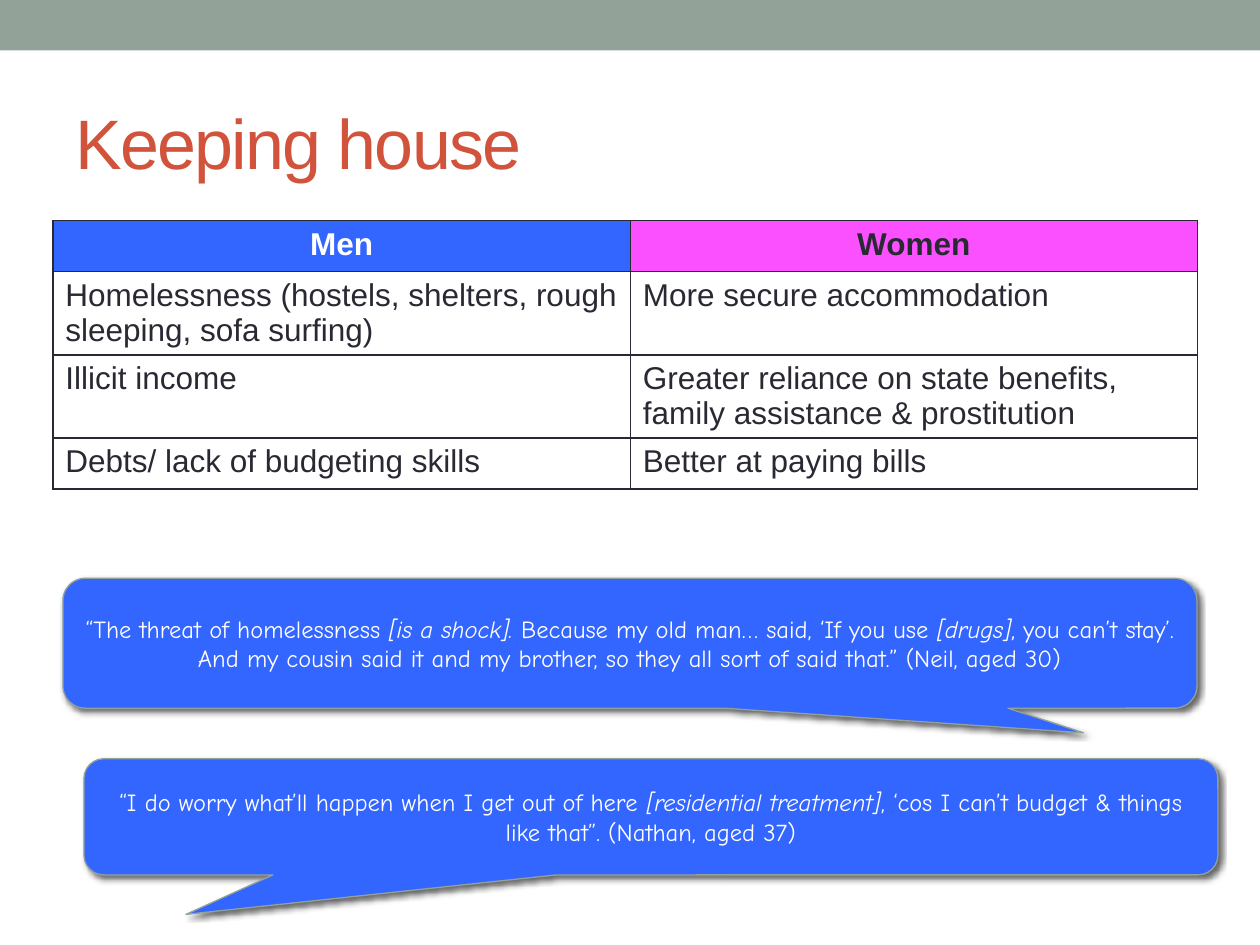
from lxml.etree import SubElement as Sub
from pptx import Presentation
from pptx.dml.color import RGBColor as RGB
from pptx.enum.shapes import MSO_SHAPE as Shape
from pptx.enum.text import MSO_ANCHOR as Anchor, MSO_AUTO_SIZE as Fit, PP_ALIGN as Align
from pptx.oxml.ns import qn
from pptx.util import Pt

HUES = {"sage": "93A299", "rust": "D2533C", "ink": "292934",
        "blue": "3366FF", "pink": "FA50FF", "white": "FFFFFF", "black": "000000"}


def hue(name):
    return RGB.from_string(HUES[name])


def style(run, face, size, name, bold=False, slant=False):
    font = run.font
    font.name, font.size = face, Pt(size)
    font.bold, font.italic = bold, slant
    font.color.rgb = hue(name)


deck = Presentation()
deck.slide_width, deck.slide_height = Pt(720), Pt(540)
slide = deck.slides.add_slide(deck.slide_layouts[5])
shapes = slide.shapes

# Top band
band = shapes.add_shape(Shape.RECTANGLE, 0, 0, Pt(720), Pt(28.8))
band.shadow.inherit = False
band.fill.solid()
band.fill.fore_color.rgb = hue("sage")
band.line.fill.background()

# Title
title = shapes.title
title.left, title.top, title.width, title.height = Pt(36), Pt(42), Pt(648), Pt(78)
frame = title.text_frame
frame.text = "Keeping house"
frame.auto_size = Fit.NONE
frame.vertical_anchor = Anchor.MIDDLE
para = frame.paragraphs[0]
para.alignment = Align.LEFT
style(para.runs[0], "Arial", 40, "rust")
para.runs[0].font._element.set("spc", "-100")

# Comparison table
rows = [
    ("Men", "Women"),
    ("Homelessness (hostels, shelters, rough sleeping, sofa surfing)",
     "More secure accommodation"),
    ("Illicit income",
     "Greater reliance on state benefits, family assistance & prostitution"),
    ("Debts/ lack of budgeting skills", "Better at paying bills"),
]
heads = [("blue", "white"), ("pink", "ink")]
table = shapes.add_table(len(rows), 2, Pt(30.2), Pt(126), Pt(654), Pt(116.8)).table
table.columns[0].width, table.columns[1].width = Pt(330), Pt(324)
for r, row in enumerate(rows):
    for c, words in enumerate(row):
        cell = table.cell(r, c)
        # Borders go in before the fill, as the schema orders them
        props = cell._tc.get_or_add_tcPr()
        for side in ("a:lnL", "a:lnR", "a:lnT", "a:lnB"):
            edge = Sub(props, qn(side), w=str(Pt(1)))
            Sub(Sub(edge, qn("a:solidFill")), qn("a:srgbClr"), val=HUES["ink"])
        cell.text = words
        para = cell.text_frame.paragraphs[0]
        if r == 0:
            back, fore = heads[c]
            cell.fill.solid()
            cell.fill.fore_color.rgb = hue(back)
            para.alignment = Align.CENTER
        else:
            fore = "ink"
            cell.fill.background()
        style(para.runs[0], "Arial", 18, fore, bold=r == 0)

# Quote bubbles: box, tail adjustments, then text with every second part in italics
quotes = [
    ((36, 330.5, 648, 74.2), (0.4, 0.69, 0.17),
     ["“The threat of homelessness ", "[is a shock]. ",
      "Because my old man… said, ‘If you use ", "[drugs]",
      ", you can’t stay’. And my cousin said it and my brother, "
      "so they all sort of said that.” (Neil, aged 30)"]),
    ((48, 433.6, 648, 66.4), (-0.41, 0.84, 0.17),
     ["“I do worry what’ll happen when I get out of here ", "[residential treatment]",
      ", ‘cos I can’t budget & things like that”. (Nathan, aged 37)"]),
]
for box, tail, parts in quotes:
    bubble = shapes.add_shape(Shape.ROUNDED_RECTANGULAR_CALLOUT, *map(Pt, box))
    for i, value in enumerate(tail):
        bubble.adjustments[i] = value
    bubble.fill.solid()
    bubble.fill.fore_color.rgb = hue("blue")
    bubble.line.color.rgb = hue("sage")
    bubble.line.width = Pt(0.75)

    # Soft shadow to the lower right
    bubble.shadow.inherit = False
    glow = Sub(bubble._element.spPr.find(qn("a:effectLst")), qn("a:outerShdw"),
               blurRad=str(Pt(3)), dist=str(Pt(2)), dir=str(45 * 60000), rotWithShape="0")
    tint = Sub(glow, qn("a:srgbClr"), val=HUES["black"])
    Sub(tint, qn("a:alpha"), val="60000")

    frame = bubble.text_frame
    frame.word_wrap = True
    frame.vertical_anchor = Anchor.MIDDLE
    para = frame.paragraphs[0]
    para.alignment = Align.CENTER
    for i, words in enumerate(parts):
        run = para.add_run()
        run.text = words
        style(run, "Comic Neue", 14, "white", slant=i % 2 == 1)

deck.save("out.pptx")
